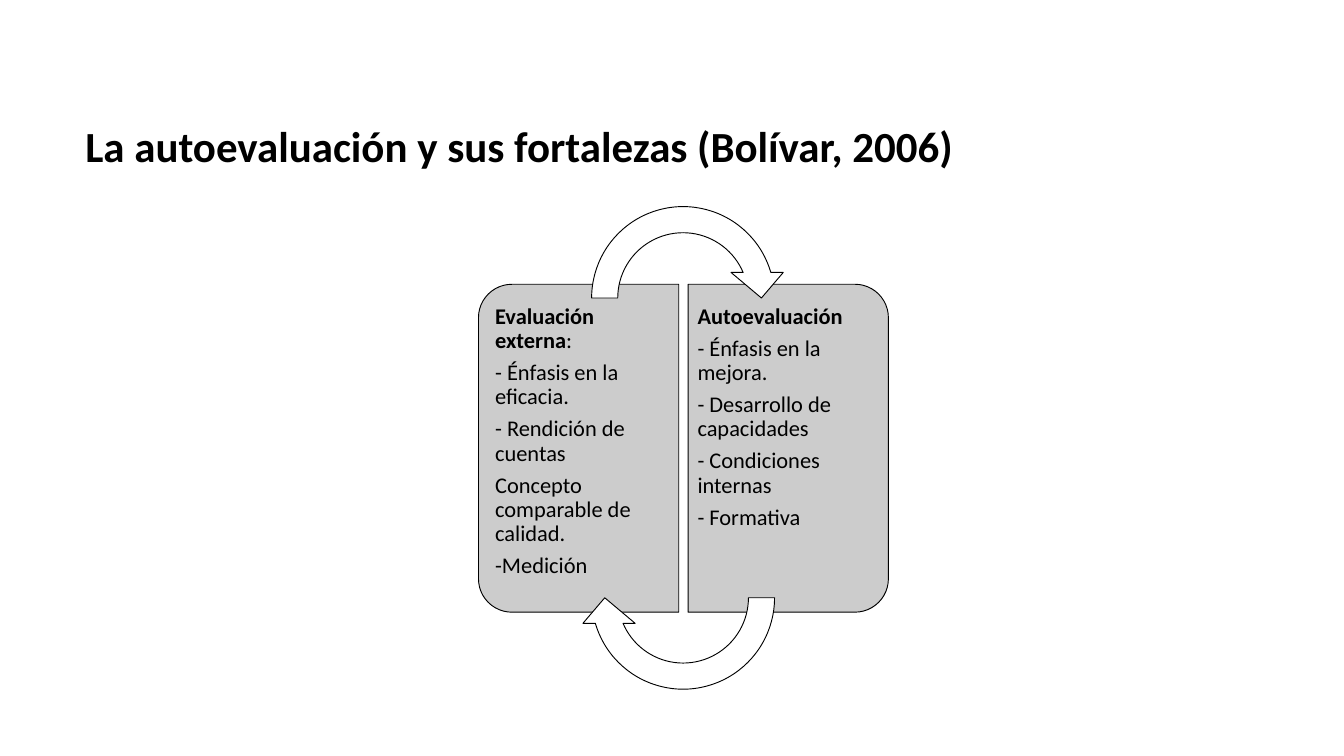
"""Build a slide that sets external evaluation beside self-evaluation."""
from dataclasses import dataclass

from pptx import Presentation
from pptx.dml.color import RGBColor as Rgb
from pptx.enum.shapes import MSO_SHAPE as Kind
from pptx.enum.text import MSO_ANCHOR as Anchor, MSO_AUTO_SIZE as Fit, PP_ALIGN as Align
from pptx.shapes.autoshape import Shape
from pptx.slide import Slide
from pptx.text.text import _Paragraph as Para
from pptx.util import Inches, Pt

HUES = {"ink": "000000", "panel": "CCCCCC", "arrow": "FFFFFF"}
FACE = "Calibri"
ROUND = (0.167, 0)
BEND = (0.125, 11.423, 204.577, 108, 0.125)


@dataclass
class Panel:
    """One half of the pair, with its heading and points."""

    left: float
    turn: int
    text_left: float
    pads: tuple[float, float]
    head: str
    tail: str
    points: list[str]


@dataclass
class Arrow:
    """A curved arrow from one half to the other."""

    top: float
    turn: int


PANELS = [
    Panel(6.17, 270, 7.27, (0.1, 0.15), "Evaluación externa", ":", [
        "- Énfasis en la eficacia.",
        "- Rendición de cuentas",
        "Concepto comparable de calidad.",
        "-Medición",
    ]),
    Panel(9.29, 90, 10.23, (0.15, 0.1), "Autoevaluación", "", [
        "- Énfasis en la mejora.",
        "- Desarrollo de capacidades",
        "- Condiciones internas",
        "- Formativa",
    ]),
]
ARROWS = [Arrow(2.88, 0), Arrow(7.34, 180)]


def style(para: Para, size: float, bold: bool = False) -> None:
    """Set the font and spacing of a paragraph."""
    para.alignment = Align.LEFT
    para.line_spacing = 0.9
    font = para.font
    font.name, font.size, font.bold = FACE, Pt(size), bold
    font.color.rgb = Rgb.from_string(HUES["ink"])


def draw_shape(slide: Slide, kind: Kind, box: tuple[float, ...], turn: int,
               hue: str, bends: tuple[float, ...]) -> Shape:
    """Draw an outlined preset shape."""
    shape = slide.shapes.add_shape(kind, *map(Inches, box))
    shape.rotation = turn
    shape.shadow.inherit = False
    shape.fill.solid()
    shape.fill.fore_color.rgb = Rgb.from_string(HUES[hue])
    shape.line.color.rgb = Rgb.from_string(HUES["ink"])
    shape.line.width = Pt(1)
    for i, bend in enumerate(bends):
        shape.adjustments[i] = bend
    return shape


def draw_panel(slide: Slide, panel: Panel) -> None:
    """Draw a half panel and its text."""
    draw_shape(slide, Kind.ROUND_2_SAME_RECTANGLE,
               (panel.left, 5.18, 4.88, 2.98), panel.turn, "panel", ROUND)
    box = slide.shapes.add_textbox(
        *map(Inches, (panel.text_left, 4.37, 2.83, 4.58)))
    frame = box.text_frame
    frame.word_wrap = True
    frame.margin_left, frame.margin_right = map(Inches, panel.pads)
    frame.margin_top = frame.margin_bottom = Inches(0.17)
    para = frame.paragraphs[0]
    run = para.add_run()
    run.text = panel.head
    run.font.bold = True
    if panel.tail:
        para.add_run().text = panel.tail
    for point in panel.points:
        frame.add_paragraph().text = point
    for para in frame.paragraphs:
        style(para, 24)
        para.space_after = Pt(8.4)


def draw_title(slide: Slide, text: str) -> None:
    """Place and format the title."""
    title = slide.shapes.title
    title.left, title.top, title.width, title.height = map(
        Inches, (1.17, 1.13, 17.25, 2.17))
    frame = title.text_frame
    frame.text = text
    frame.auto_size = Fit.NONE
    frame.vertical_anchor = Anchor.MIDDLE
    style(frame.paragraphs[0], 46, True)


def main() -> None:
    """Build and save the deck."""
    deck = Presentation()
    deck.slide_width, deck.slide_height = Inches(20), Inches(11.25)
    slide = deck.slides.add_slide(deck.slide_layouts[5])
    draw_title(slide, "La autoevaluación y sus fortalezas (Bolívar, 2006)")
    for panel in PANELS:
        draw_panel(slide, panel)
    for arrow in ARROWS:
        draw_shape(slide, Kind.CIRCULAR_ARROW, (8.61, arrow.top, 3.11, 3.11),
                   arrow.turn, "arrow", BEND)
    deck.save("out.pptx")


if __name__ == "__main__":
    main()
